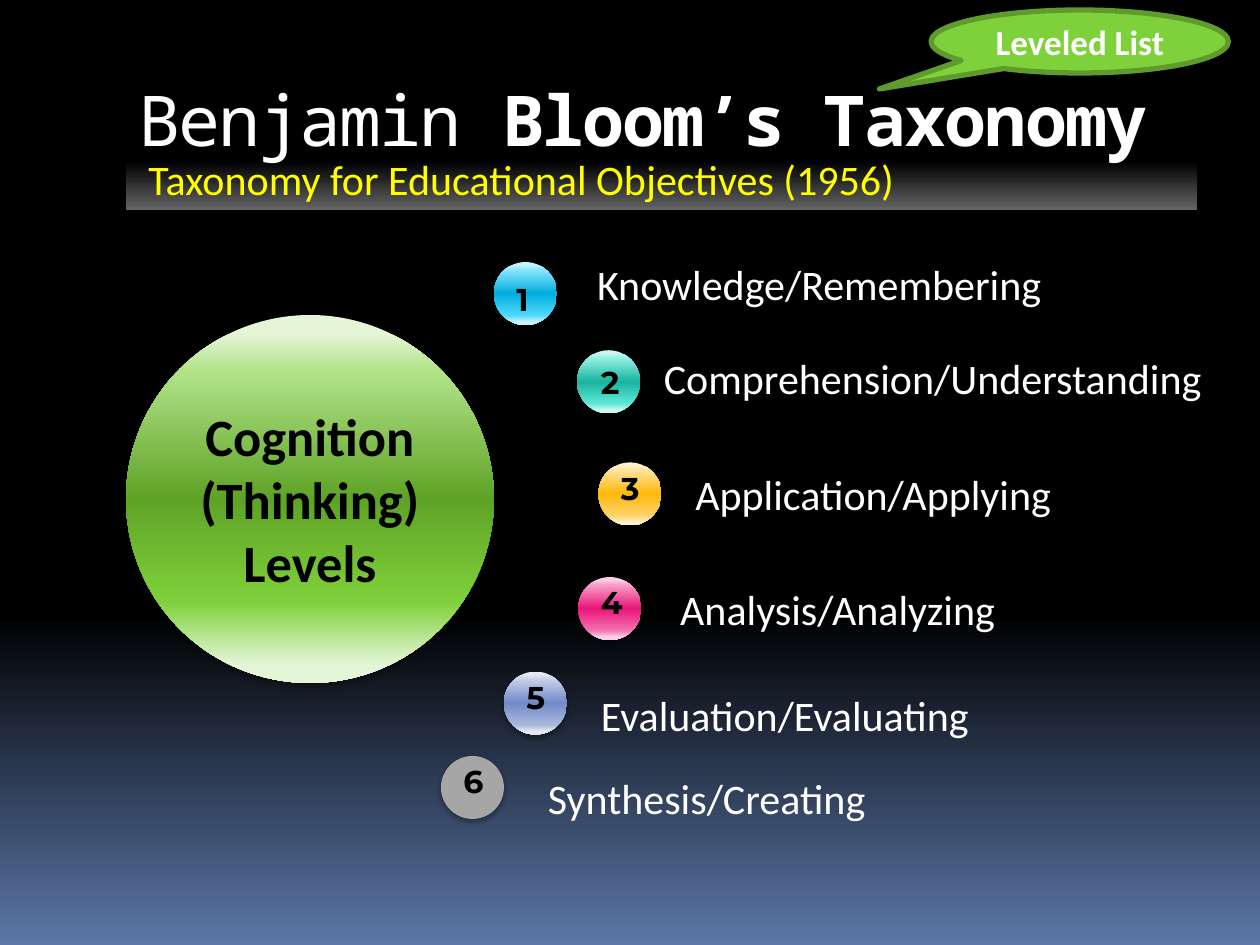
from pptx import Presentation
from pptx.dml.color import RGBColor
from pptx.enum.shapes import MSO_SHAPE as SHAPE
from pptx.enum.text import MSO_ANCHOR as ANCHOR, PP_ALIGN as ALIGN
from pptx.oxml import parse_xml
from pptx.oxml.ns import nsdecls, qn
from pptx.util import Inches, Pt

BLACK = RGBColor(0, 0, 0)
WHITE = RGBColor(255, 255, 255)
YELLOW = RGBColor(255, 255, 0)
GREEN = RGBColor(0x7F, 0xD1, 0x3B)
DARK_GREEN = RGBColor(0x5E, 0x9B, 0x2C)
GRAY = RGBColor(0xA6, 0xA6, 0xA6)

NIGHT = [(0, "000000"), (65, "000000"), (100, "5B77A8")]
TITLE_BAR = [(0, "000000"), (65, "000000"), (100, "656565")]
COGNITION = [(5, "E5F6D8"), (15, "B2E389"), (50, "5FA326"), (78, "7FD13B"), (95, "E5F6D8")]


def glossy(edge, light, core, glow):
    return list(zip((5, 12, 50, 85, 95), (edge, light, core, glow, edge)))


# ball left/top, number left/top, label, label left/top/width, fill
LEVELS = [
    ((3.92, 2.08), (4, 2.17), "Knowledge/Remembering", (4.64, 2, 3.95),
     glossy("C5F3FF", "8BE6FF", "00ADDC", "51DAFF")),
    ((4.58, 2.78), (4.67, 2.83), "Comprehension/Understanding", (5.17, 2.75, 4.83),
     glossy("CAF7F1", "94F0E4", "1AB39F", "5FE8D6")),
    ((4.75, 3.67), (4.83, 3.67), "Application/Applying", (5.42, 3.67, 3.95),
     glossy("FFF1CE", "FFE39D", "FEB80A", "FED46C")),
    ((4.59, 4.58), (4.67, 4.58), "Analysis/Analyzing", (5.3, 4.58, 3.95),
     glossy("FBD0E4", "F7A1CA", "EA157A", "F273AF")),
    ((4, 5.33), (4.08, 5.33), "Evaluation/Evaluating", (4.67, 5.42, 3.95),
     glossy("E3E8F4", "C7D0E9", "738AC8", "ABB9DE")),
    ((3.5, 6), (3.58, 6), "Synthesis/Creating", (4.25, 6.08, 3.95), GRAY),
]


class SlideBuilder:
    def __init__(self, slide, font="Calibri", size=24, color=WHITE):
        self.s, self.font, self.size, self.color = slide, font, size, color

    def paint(self, fill, element, paint):
        """Fill with one colour, or with a top-to-bottom list of gradient stops."""
        if isinstance(paint, RGBColor):
            fill.solid()
            fill.fore_color.rgb = paint
            return
        fill.gradient()
        fill.gradient_angle = 270
        stops = element.xpath(".//a:gradFill/a:gsLst")[0]
        for old in list(stops):
            stops.remove(old)
        for pos, color in paint:
            stops.append(parse_xml(
                f'<a:gs {nsdecls("a")} pos="{pos * 1000}"><a:srgbClr val="{color}"/></a:gs>'))

    def background(self, paint):
        self.paint(self.s.background.fill, self.s._element, paint)

    def shape(self, kind, left, top, width, height, paint):
        sp = self.s.shapes.add_shape(kind, Inches(left), Inches(top), Inches(width), Inches(height))
        self.paint(sp.fill, sp._element, paint)
        sp.line.fill.background()
        sp.shadow.inherit = False
        return sp

    def ball(self, left, top, diameter, paint):
        sp = self.shape(SHAPE.OVAL, left, top, diameter, diameter, paint)
        sp._element.spPr.find(qn("a:effectLst")).append(parse_xml(
            f'<a:outerShdw {nsdecls("a")} blurRad="{Pt(3.1)}" dist="{Pt(1.8)}" dir="5400000" '
            'rotWithShape="0"><a:srgbClr val="000000"><a:alpha val="35000"/></a:srgbClr>'
            '</a:outerShdw>'))
        return sp

    def put_text(self, sp, text, align=ALIGN.LEFT, anchor=ANCHOR.TOP, **style):
        tf = sp.text_frame
        tf.word_wrap = True
        tf.vertical_anchor = anchor
        tf.text = text
        for p in tf.paragraphs:
            p.alignment = align
            for r in p.runs:
                self.style(r, **style)

    def style(self, r, size=None, color=None, font=None, bold=False):
        r.font.name = font or self.font
        r.font.size = Pt(size or self.size)
        r.font.bold = bold
        r.font.color.rgb = self.color if color is None else color

    def text(self, text, left, top, width, height=0.5, **style):
        sp = self.s.shapes.add_textbox(Inches(left), Inches(top), Inches(width), Inches(height))
        self.put_text(sp, text, **style)

    def title(self, plain, strong):
        sp = self.shape(SHAPE.RECTANGLE, 1, 0.56, 8.5, 1.11, TITLE_BAR)
        look = dict(size=40, font="Noto Sans Mono")
        self.put_text(sp, plain, **look)
        p = sp.text_frame.paragraphs[0]
        r = p.add_run()
        r.text = strong
        self.style(r, bold=True, **look)
        for r in p.runs:
            r.font._element.set("spc", "-100")

    def callout(self, text, left, top, width, height, tip):
        sp = self.shape(SHAPE.OVAL_CALLOUT, left, top, width, height, GREEN)
        sp.adjustments[0], sp.adjustments[1] = tip
        sp.line.color.rgb = DARK_GREEN
        sp.line.width = Pt(3)
        self.put_text(sp, text, ALIGN.CENTER, ANCHOR.MIDDLE, size=20, bold=True)


def main():
    prs = Presentation()
    prs.slide_width, prs.slide_height = Inches(10), Inches(7.5)
    b = SlideBuilder(prs.slides.add_slide(prs.slide_layouts[6]))
    b.background(NIGHT)

    b.title("Benjamin ", "Bloom’s Taxonomy")
    b.text("Taxonomy for Educational Objectives (1956)", 1.08, 1.17, 7.83, color=YELLOW)

    cognition = b.ball(1, 2.5, 2.92, COGNITION)
    b.put_text(cognition, "Cognition\n(Thinking)\nLevels", ALIGN.CENTER, ANCHOR.MIDDLE,
               size=30, color=BLACK, bold=True)

    for number, (ball, digit, label, place, paint) in enumerate(LEVELS, 1):
        b.ball(*ball, 0.5, paint)
        b.text(label, *place)
        b.text(str(number), *digit, 0.33, 0.4, size=18, color=BLACK, font="Montserrat", bold=True)

    b.callout("Leveled List", 7.39, 0.08, 2.36, 0.5, tip=(-0.674, 0.753))
    prs.save("out.pptx")


if __name__ == "__main__":
    main()
